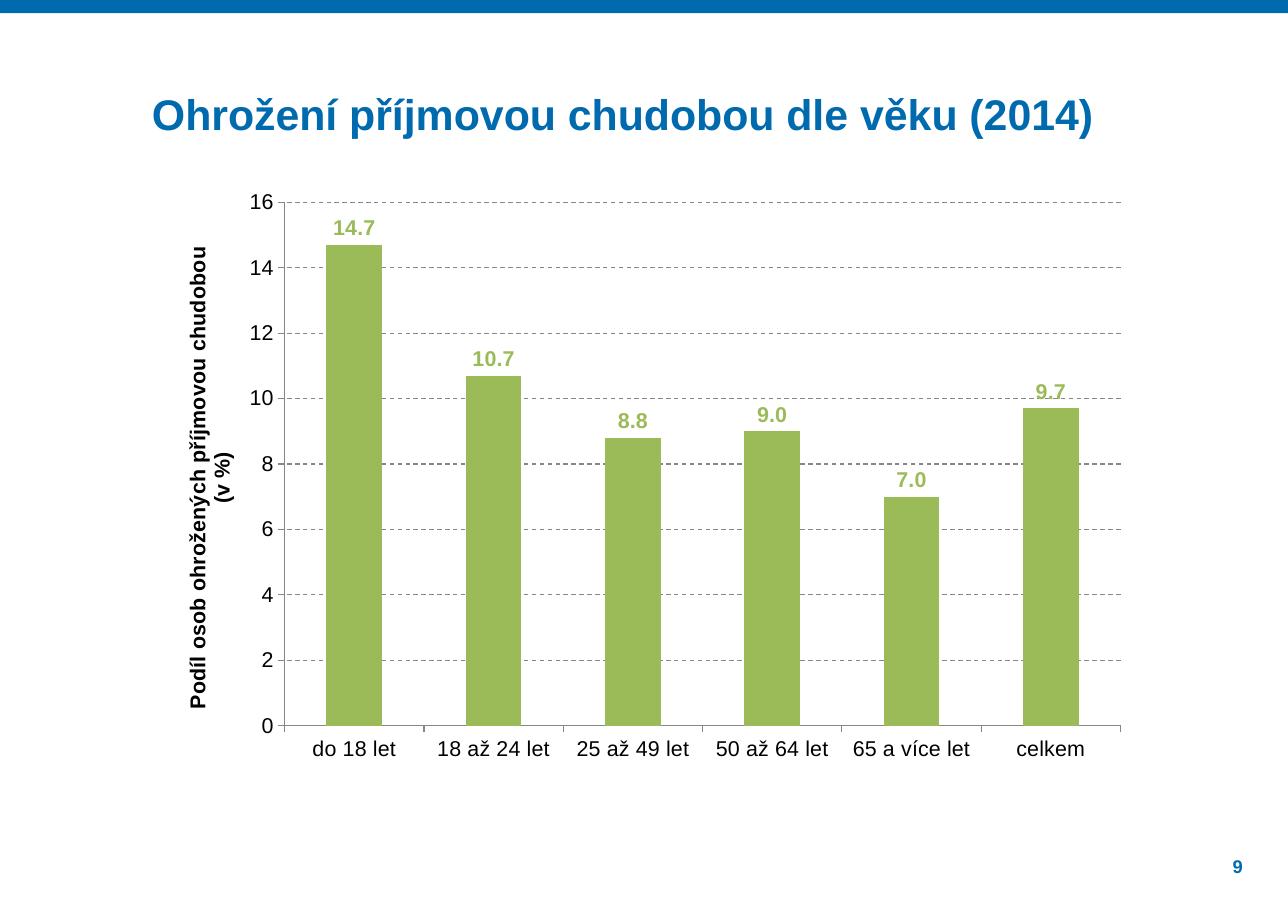
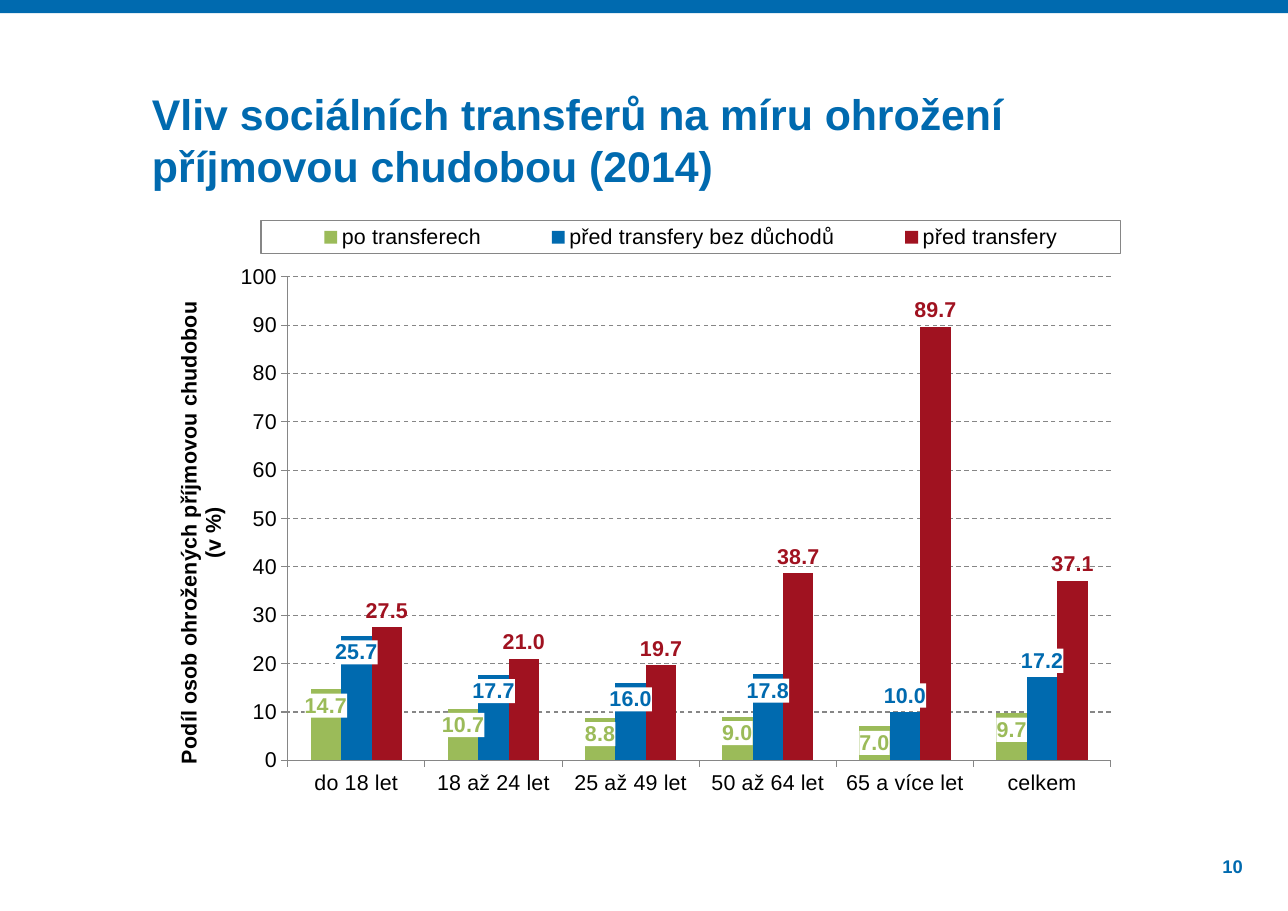
from dataclasses import dataclass

from lxml import etree
from pptx import Presentation
from pptx import util as u
from pptx.chart.axis import ValueAxis
from pptx.chart.chart import Chart
from pptx.chart.data import CategoryChartData
from pptx.chart.series import BarSeries
from pptx.dml.color import RGBColor
from pptx.enum import chart as ch
from pptx.enum import dml, shapes, text
from pptx.oxml import parse_xml
from pptx.oxml.ns import nsdecls, qn
from pptx.slide import Slide
from copy import deepcopy

WIDTH, HEIGHT = 11.69, 8.27
FONT = "Arial"
COLORS = {"blue": "006AAF", "green": "9BBB59", "red": "A01220",
          "black": "000000", "grey": "868686", "white": "FFFFFF"}
AGES = ["do 18 let", "18 až 24 let", "25 až 49 let",
        "50 až 64 let", "65 a více let", "celkem"]
AXIS_TITLE = "Podíl osob ohrožených příjmovou chudobou (v %)"
AFTER_TRANSFERS = (14.7, 10.7, 8.8, 9.0, 7.0, 9.7)
CHART_SIZE = (9, 5.4)


@dataclass(frozen=True)
class Bars:
    name: str
    values: tuple[float, ...]
    color: str
    inside: bool = False  # labels on white inside the bar end
    raised: tuple[int, ...] = ()  # points labelled above the bar instead


@dataclass(frozen=True)
class ChartPage:
    number: int
    title: str
    corner: tuple[float, float]
    top: float  # value axis maximum
    step: float
    bars: tuple[Bars, ...]
    # Shares of the chart: left, top, then width and height
    plot: tuple[float, ...]
    axis_title: tuple[float, ...]
    legend: tuple[float, ...] = ()


PAGES = (
    ChartPage(9, "Ohrožení příjmovou chudobou dle věku (2014)", (1.36, 1.61), 16, 2,
              (Bars("Series 1", AFTER_TRANSFERS, "green"),),
              plot=(0.136, 0.042, 0.843, 0.88), axis_title=(0.03, 0.11)),
    ChartPage(10, "Vliv sociálních transferů na míru ohrožení příjmovou chudobou (2014)",
              (1.28, 1.93), 100, 10,
              (Bars("po transferech", AFTER_TRANSFERS, "green", True),
               Bars("před transfery bez důchodů", (25.7, 17.7, 16.0, 17.8, 10.0, 17.2),
                    "blue", True, (4, 5)),
               Bars("před transfery", (27.5, 21.0, 19.7, 38.7, 89.7, 37.1), "red")),
              plot=(0.148, 0.108, 0.83, 0.813), axis_title=(0.03, 0.143),
              legend=(0.121, 0.014, 0.867, 0.055)),
)


def rgb(name: str) -> RGBColor:
    return RGBColor.from_string(COLORS[name])


def style_font(font, size: float, color: str, bold: bool = False) -> None:
    font.name, font.size, font.bold = FONT, u.Pt(size), bold
    font.color.rgb = rgb(color)


def add_text(page: Slide, area: tuple[float, ...], words: str, size: float,
             align: text.PP_ALIGN, leading: float | None = None) -> None:
    box = page.shapes.add_textbox(*map(u.Inches, area))
    frame = box.text_frame
    frame.word_wrap = True
    frame.margin_left = frame.margin_right = frame.margin_top = frame.margin_bottom = 0
    para = frame.paragraphs[0]
    para.text, para.alignment = words, align
    if leading:
        para.line_spacing = u.Pt(leading)
    style_font(para.font, size, "blue", True)


def add_frame(page: Slide, content: ChartPage) -> None:
    """Top band, title and page number shared by all slides."""
    band = page.shapes.add_shape(shapes.MSO_SHAPE.RECTANGLE, 0, 0,
                                 u.Inches(WIDTH), u.Inches(0.12))
    band.shadow.inherit = False
    band.fill.solid()
    band.fill.fore_color.rgb = rgb("blue")
    band.line.fill.background()
    add_text(page, (1.38, 0.79, 8.94, 1.3), content.title, 28, text.PP_ALIGN.LEFT, 34)
    add_text(page, (10.61, 7.76, 0.67, 0.24), str(content.number), 12, text.PP_ALIGN.RIGHT)


def place(chart: Chart, query: str, index: int, shares: tuple[float, ...]) -> None:
    """Fix a chart part at shares of the chart's size."""
    part = chart.element.xpath(query)[0]
    layout = part.find(qn("c:layout"))
    if layout is None:
        layout = parse_xml(f"<c:layout {nsdecls('c')}/>")
        part.insert(index, layout)
    manual = etree.SubElement(layout, qn("c:manualLayout"))
    settings = [("xMode", "edge"), ("yMode", "edge"), *zip("xywh", shares)]
    if part.tag == qn("c:plotArea"):
        settings.insert(0, ("layoutTarget", "inner"))
    for tag, value in settings:
        etree.SubElement(manual, qn(f"c:{tag}")).set("val", str(value))


def style_series(series: BarSeries, bars: Bars) -> None:
    series.format.fill.solid()
    series.format.fill.fore_color.rgb = rgb(bars.color)
    series.invert_if_negative = False
    labels = series.data_labels
    labels.show_value = True
    labels.number_format, labels.number_format_is_linked = "#,##0.0", False
    style_font(labels.font, 14, bars.color, True)
    above = ch.XL_LABEL_POSITION.OUTSIDE_END
    labels.position = ch.XL_LABEL_POSITION.INSIDE_END if bars.inside else above
    root = series.data_labels._element
    if bars.inside:
        root.find(qn("c:numFmt")).addnext(parse_xml(
            f"<c:spPr {nsdecls('c', 'a')}><a:solidFill>"
            f"<a:srgbClr val='{COLORS['white']}'/></a:solidFill></c:spPr>"))
    for index in bars.raised:
        series.points[index].data_label.position = above
    # Raised labels share the look of the series labels
    for position in root.xpath("c:dLbl/c:dLblPos"):
        for tag in ("c:numFmt", "c:spPr", "c:txPr"):
            position.addprevious(deepcopy(root.find(qn(tag))))


def style_value_axis(axis: ValueAxis, content: ChartPage) -> None:
    axis.minimum_scale, axis.maximum_scale = 0, content.top
    axis.major_unit = content.step
    axis.tick_labels.number_format = "#,##0"
    axis.tick_labels.number_format_is_linked = False
    axis.has_major_gridlines = True
    grid = axis.major_gridlines.format.line
    grid.color.rgb, grid.width = rgb("grey"), u.Pt(0.75)
    grid.dash_style = dml.MSO_LINE.DASH
    para = axis.axis_title.text_frame.paragraphs[0]
    para.text = AXIS_TITLE
    style_font(para.font, 14, "black", True)


def add_bar_chart(page: Slide, content: ChartPage) -> None:
    data = CategoryChartData()
    data.categories = AGES
    for bars in content.bars:
        data.add_series(bars.name, bars.values)
    chart = page.shapes.add_chart(ch.XL_CHART_TYPE.COLUMN_CLUSTERED,
                                  *map(u.Inches, content.corner + CHART_SIZE), data).chart
    chart.has_title = False
    style_font(chart.font, 14, "black")
    plot = chart.plots[0]
    plot.gap_width, plot.overlap, plot.vary_by_categories = 150, 0, False
    for series, bars in zip(plot.series, content.bars):
        style_series(series, bars)

    # Axes
    for axis in (chart.category_axis, chart.value_axis):
        axis.format.line.color.rgb = rgb("grey")
        axis.format.line.width = u.Pt(0.75)
        axis.major_tick_mark = ch.XL_TICK_MARK.OUTSIDE
        axis.minor_tick_mark = ch.XL_TICK_MARK.NONE
    style_value_axis(chart.value_axis, content)
    place(chart, ".//c:plotArea", 0, content.plot)
    place(chart, ".//c:valAx/c:title", 1, content.axis_title)

    # Legend
    chart.has_legend = bool(content.legend)
    if content.legend:
        chart.legend.position = ch.XL_LEGEND_POSITION.TOP
        chart.legend.include_in_layout = False
        style_font(chart.legend.font, 14, "black")
        place(chart, ".//c:legend", 1, content.legend)
        chart.element.xpath(".//c:legend/c:txPr")[0].addprevious(parse_xml(
            f"<c:spPr {nsdecls('c', 'a')}><a:ln w='9525'><a:solidFill>"
            f"<a:srgbClr val='{COLORS['grey']}'/></a:solidFill></a:ln></c:spPr>"))


def main() -> None:
    deck = Presentation()
    deck.slide_width, deck.slide_height = u.Inches(WIDTH), u.Inches(HEIGHT)
    for content in PAGES:
        page = deck.slides.add_slide(deck.slide_layouts[6])
        add_frame(page, content)
        add_bar_chart(page, content)
    deck.save("out.pptx")


if __name__ == "__main__":
    main()
